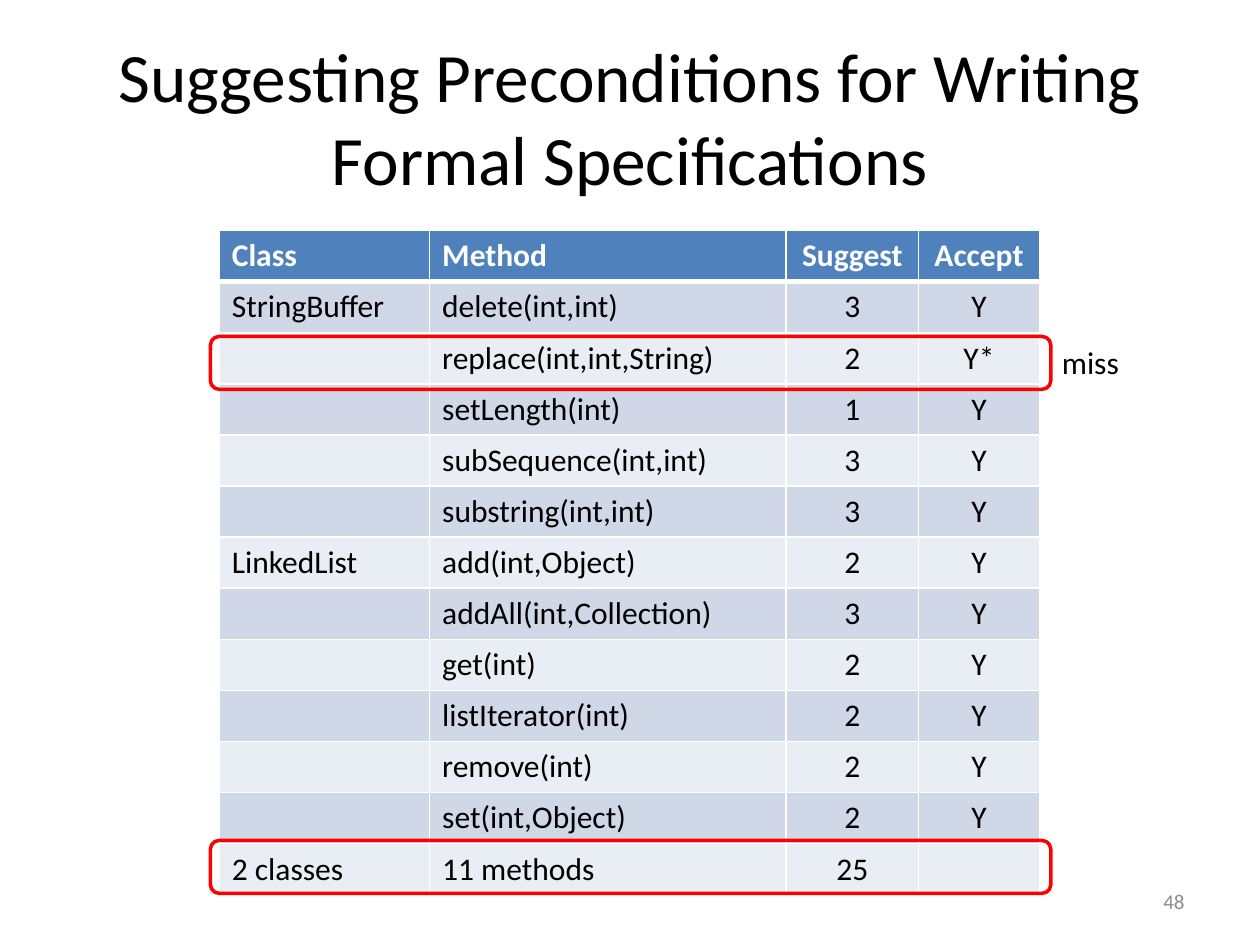
from typing import NamedTuple

from lxml import etree
from pptx import Presentation
from pptx import util as u
from pptx.dml.color import RGBColor
from pptx.enum import shapes, text
from pptx.oxml import ns

FONT = "Calibri"
BLACK, WHITE, GRAY, RED, BLUE = "000000", "FFFFFF", "8C8C8C", "FF0000", "4F81BD"
BANDS = ("E9EDF4", "D0D8E8")
LEFT, MID, RIGHT = text.PP_ALIGN.LEFT, text.PP_ALIGN.CENTER, text.PP_ALIGN.RIGHT
WIDTHS = (1.67, 2.83, 1.05, 0.96)
ALIGNS = (LEFT, LEFT, MID, MID)


class Row(NamedTuple):
    group: str
    method: str
    suggest: str
    accept: str = "Y"


class Label(NamedTuple):
    words: str
    left: float
    top: float
    width: float
    height: float
    size: float
    color: str = BLACK
    align: text.PP_ALIGN = LEFT
    anchor: text.MSO_ANCHOR = text.MSO_ANCHOR.MIDDLE
    wrap: bool = True


ROWS = (
    Row("Class", "Method", "Suggest", "Accept"),
    Row("StringBuffer", "delete(int,int)", "3"),
    Row("", "replace(int,int,String)", "2", "Y*"),
    Row("", "setLength(int)", "1"),
    Row("", "subSequence(int,int)", "3"),
    Row("", "substring(int,int)", "3"),
    Row("LinkedList", "add(int,Object)", "2"),
    Row("", "addAll(int,Collection)", "3"),
    Row("", "get(int)", "2"),
    Row("", "listIterator(int)", "2"),
    Row("", "remove(int)", "2"),
    Row("", "set(int,Object)", "2"),
    Row("2 classes", "11 methods", "25", ""),
)
LABELS = (
    Label("Suggesting Preconditions for Writing Formal Specifications",
          0.5, 0.3, 9, 1.25, 39.6, align=MID),
    Label("48", 7.17, 6.95, 2.33, 0.4, 12, GRAY, RIGHT),
    Label("miss", 8.33, 2.67, 0.66, 0.4, 18,
          anchor=text.MSO_ANCHOR.TOP, wrap=False),
)
MARKS = (2.67, 6.67)


def rgb(code: str) -> RGBColor:
    return RGBColor.from_string(code)


def write(frame, words: str, size: float, color: str, align, bold=False) -> None:
    para = frame.paragraphs[0]
    para.alignment = align
    run = para.add_run()
    run.text = words
    font = run.font
    font.name, font.size, font.bold = FONT, u.Pt(size), bold
    font.color.rgb = rgb(color)


def add_label(slide, item: Label) -> None:
    box = slide.shapes.add_textbox(u.Inches(item.left), u.Inches(item.top),
                                   u.Inches(item.width), u.Inches(item.height))
    frame = box.text_frame
    frame.word_wrap = item.wrap
    frame.vertical_anchor = item.anchor
    if not item.wrap:
        frame.auto_size = text.MSO_AUTO_SIZE.SHAPE_TO_FIT_TEXT
    write(frame, item.words, item.size, item.color, item.align)


def edge(cell, side: str, width: float) -> None:
    """Draw one white border of a cell."""
    props = cell._tc.get_or_add_tcPr()
    line = etree.SubElement(props, ns.qn(f"a:ln{side}"), w=str(u.Pt(width)))
    fill = etree.SubElement(line, ns.qn("a:solidFill"))
    etree.SubElement(fill, ns.qn("a:srgbClr"), val=WHITE)


def add_grid(slide) -> None:
    grid = slide.shapes.add_table(
        len(ROWS), len(WIDTHS), u.Inches(1.74), u.Inches(1.83),
        u.Inches(sum(WIDTHS)), u.Inches(5.27)).table
    for col, width in zip(grid.columns, WIDTHS):
        col.width = u.Inches(width)
    for r, row in enumerate(ROWS):
        head = r == 0
        for c, words in enumerate(row):
            cell = grid.cell(r, c)
            for side in "LRTB":
                thick = (head and side == "B") or (r == 1 and side == "T")
                edge(cell, side, 3 if thick else 1)
            cell.fill.solid()
            cell.fill.fore_color.rgb = rgb(BLUE if head else BANDS[r % 2])
            if words:
                write(cell.text_frame, words, 18, WHITE if head else BLACK,
                      ALIGNS[c], head)


def add_mark(slide, top: float) -> None:
    """Outline one table row in red."""
    mark = slide.shapes.add_shape(
        shapes.MSO_SHAPE.ROUNDED_RECTANGLE, u.Inches(1.67), u.Inches(top),
        u.Inches(6.67), u.Inches(0.42))
    mark.shadow.inherit = False
    mark.fill.background()
    mark.line.color.rgb = rgb(RED)
    mark.line.width = u.Pt(2)


def main() -> None:
    deck = Presentation()
    deck.slide_width, deck.slide_height = u.Inches(10), u.Inches(7.5)
    slide = deck.slides.add_slide(deck.slide_layouts[6])
    add_grid(slide)
    for top in MARKS:
        add_mark(slide, top)
    for item in LABELS:
        add_label(slide, item)
    deck.save("out.pptx")


if __name__ == "__main__":
    main()
